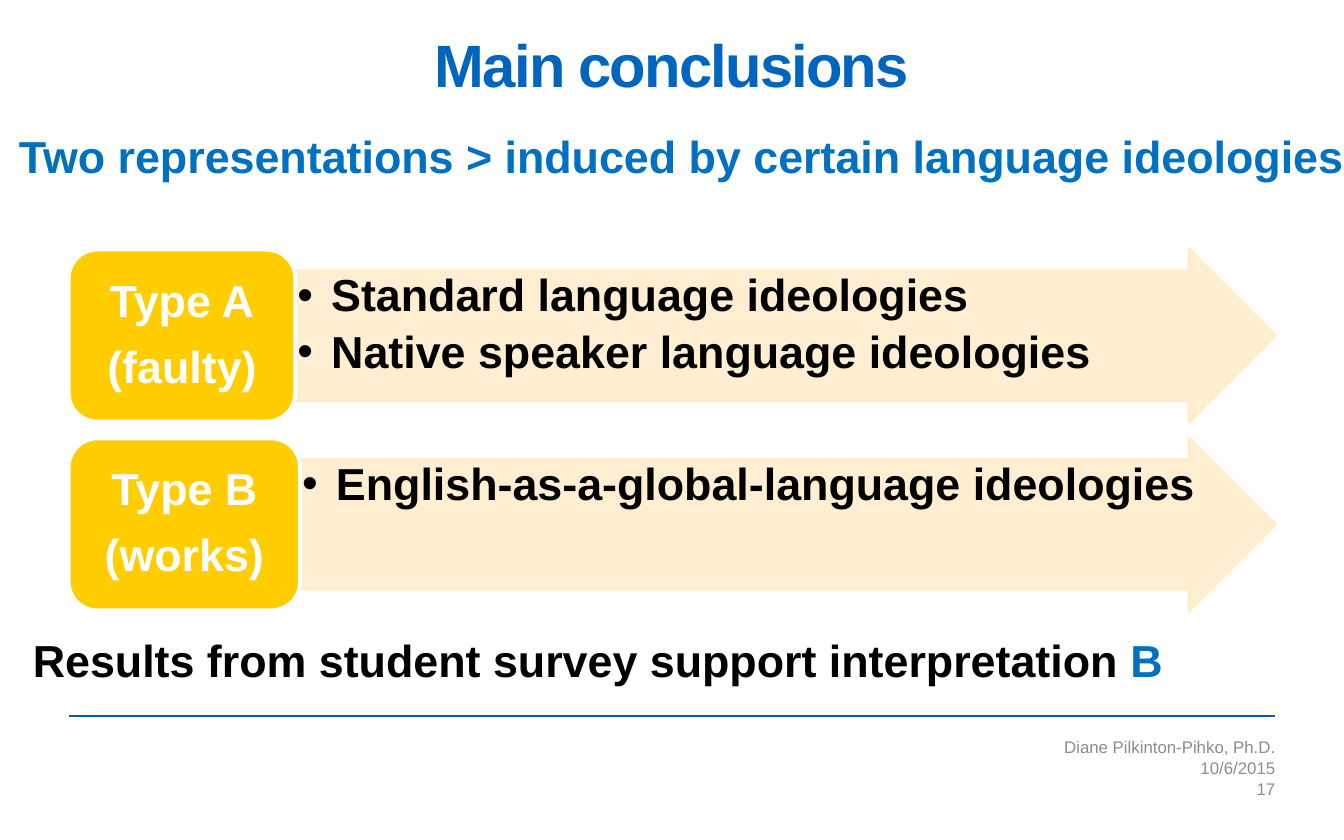
import pptx
import pptx.dml.color
import pptx.enum.shapes
import pptx.enum.text
import pptx.oxml.ns
import pptx.util
import lxml.etree
from dataclasses import dataclass

Cm, Pt = pptx.util.Cm, pptx.util.Pt
SHAPE = pptx.enum.shapes.MSO_SHAPE
ANCHOR = pptx.enum.text.MSO_ANCHOR
ALIGN = pptx.enum.text.PP_ALIGN


@dataclass(frozen=True)
class Theme:
    font: str = "Arial"
    title_size: int = 32
    body_size: int = 24
    footer_size: int = 9
    title: str = "0065BD"
    accent: str = "0070C0"
    rule: str = "005EB8"
    text: str = "000000"
    light: str = "FFFFFF"
    label: str = "FFCD00"
    arrow: str = "FFEDCC"
    footer: str = "8C8C8C"
    arrow_opacity: int = 90


THEME = Theme()

# Content
TITLE = "Main conclusions"
SUBTITLE = "Two representations > induced by certain language ideologies"
TYPES = [  # label lines, label width in cm, ideologies
    (["Type A", "(faulty)"], 4.28,
     ["Standard language ideologies", "Native speaker language ideologies"]),
    (["Type B", "(works)"], 4.37, ["English-as-a-global-language ideologies"]),
]
RESULT = [("Results from student survey support interpretation", THEME.text),
          (" B", THEME.accent)]
FOOTER = ["Diane Pilkinton-Pihko, Ph.D.", "10/6/2015", "17"]

# Layout in cm
LEFT, RIGHT = 1.3, 24.1
ROW_TOP, ROW_STEP, ROW_HEIGHT = 4.72, 3.57, 3.25
RULE_Y = 13.53
FOOTER_TOP, FOOTER_STEP, FOOTER_WIDTH = 13.92, 0.4, 10.06


def rgb(value):
    return pptx.dml.color.RGBColor.from_string(value)


def add_xml(parent, tag, **attributes):
    return lxml.etree.SubElement(parent, pptx.oxml.ns.qn(tag), **attributes)


def style(font, size, color, bold=True):
    font.name, font.size, font.bold = THEME.font, Pt(size), bold
    font.color.rgb = rgb(color)


def prepare_frame(shape, anchor=ANCHOR.TOP, inset=0, wrap=True):
    frame = shape.text_frame
    frame.word_wrap, frame.vertical_anchor = wrap, anchor
    frame.margin_left = frame.margin_right = Cm(inset)
    frame.margin_top = frame.margin_bottom = Cm(inset)
    return frame


def add_box(left, top, width, height, **options):
    box = slide.shapes.add_textbox(Cm(left), Cm(top), Cm(width), Cm(height))
    return prepare_frame(box, **options)


def write(frame, lines, size, color, bold=True, align=ALIGN.LEFT,
          spacing=None, after=None, bullet=False):
    for index, line in enumerate(lines):
        paragraph = frame.paragraphs[0] if index == 0 else frame.add_paragraph()
        paragraph.text, paragraph.alignment = line, align
        paragraph.line_spacing = spacing
        if after is not None:
            paragraph.space_after = Pt(after)
        if bullet:
            properties = paragraph._p.get_or_add_pPr()
            properties.set("marL", str(Cm(0.64)))
            properties.set("indent", str(-Cm(0.64)))
            add_xml(properties, "a:buFont", typeface=THEME.font)
            add_xml(properties, "a:buChar", char="•")
        style(paragraph.font, size, color, bold)


def add_panel(preset, left, top, width, fill, line):
    panel = slide.shapes.add_shape(preset, Cm(left), Cm(top), Cm(width), Cm(ROW_HEIGHT))
    panel.shadow.inherit = False
    panel.fill.solid()
    panel.fill.fore_color.rgb = rgb(fill)
    panel.line.color.rgb = rgb(line)
    panel.line.width = Pt(2)
    return panel


presentation = pptx.Presentation()
presentation.slide_width, presentation.slide_height = Cm(25.4), Cm(15.88)
slide = presentation.slides.add_slide(presentation.slide_layouts[6])

# Rule above the footer
rule = slide.shapes.add_connector(pptx.enum.shapes.MSO_CONNECTOR.STRAIGHT,
                                  Cm(LEFT), Cm(RULE_Y), Cm(RIGHT), Cm(RULE_Y))
rule.line.color.rgb = rgb(THEME.rule)
rule.line.width = Pt(1)
add_xml(rule._element.spPr, "a:effectLst")

# Title and subtitle
heading = add_box(LEFT, 0.74, RIGHT - LEFT, 1.4)
write(heading, [TITLE], THEME.title_size, THEME.title, align=ALIGN.CENTER, spacing=0.85)
heading.paragraphs[0].runs[0]._r.get_or_add_rPr().set("spc", "-100")
subtitle = add_box(0.36, 2.44, 25.04, 1.02, wrap=False)
write(subtitle, [SUBTITLE], THEME.body_size, THEME.accent)

# Each type: an arrow of ideologies starting at its label
for row, (label_lines, label_width, ideologies) in enumerate(TYPES):
    top = ROW_TOP + row * ROW_STEP
    arrow_left = LEFT + label_width
    arrow = add_panel(SHAPE.RIGHT_ARROW, arrow_left, top, RIGHT - arrow_left,
                      THEME.arrow, THEME.arrow)
    arrow.adjustments[0], arrow.adjustments[1] = 0.75, 0.5
    for color in arrow._element.spPr.iter(pptx.oxml.ns.qn("a:srgbClr")):
        add_xml(color, "a:alpha", val=str(THEME.arrow_opacity * 1000))
    write(prepare_frame(arrow, inset=0.04), ideologies, THEME.body_size, THEME.text,
          spacing=0.9, after=4.5, bullet=True)

    label = add_panel(SHAPE.ROUNDED_RECTANGLE, LEFT, top, label_width,
                      THEME.label, THEME.light)
    write(prepare_frame(label, anchor=ANCHOR.MIDDLE), label_lines, THEME.body_size,
          THEME.light, align=ALIGN.CENTER, spacing=0.9, after=9.5)

# Survey result
result = add_box(0.62, 11.96, 24.13, 1.2).paragraphs[0]
for words, color in RESULT:
    run = result.add_run()
    run.text = words
    style(run.font, THEME.body_size, color)

# Footer
for row, line in enumerate(FOOTER):
    footer = add_box(RIGHT - FOOTER_WIDTH, FOOTER_TOP + row * FOOTER_STEP,
                     FOOTER_WIDTH, FOOTER_STEP, anchor=ANCHOR.MIDDLE)
    write(footer, [line], THEME.footer_size, THEME.footer, bold=False, align=ALIGN.RIGHT)

presentation.save("out.pptx")
